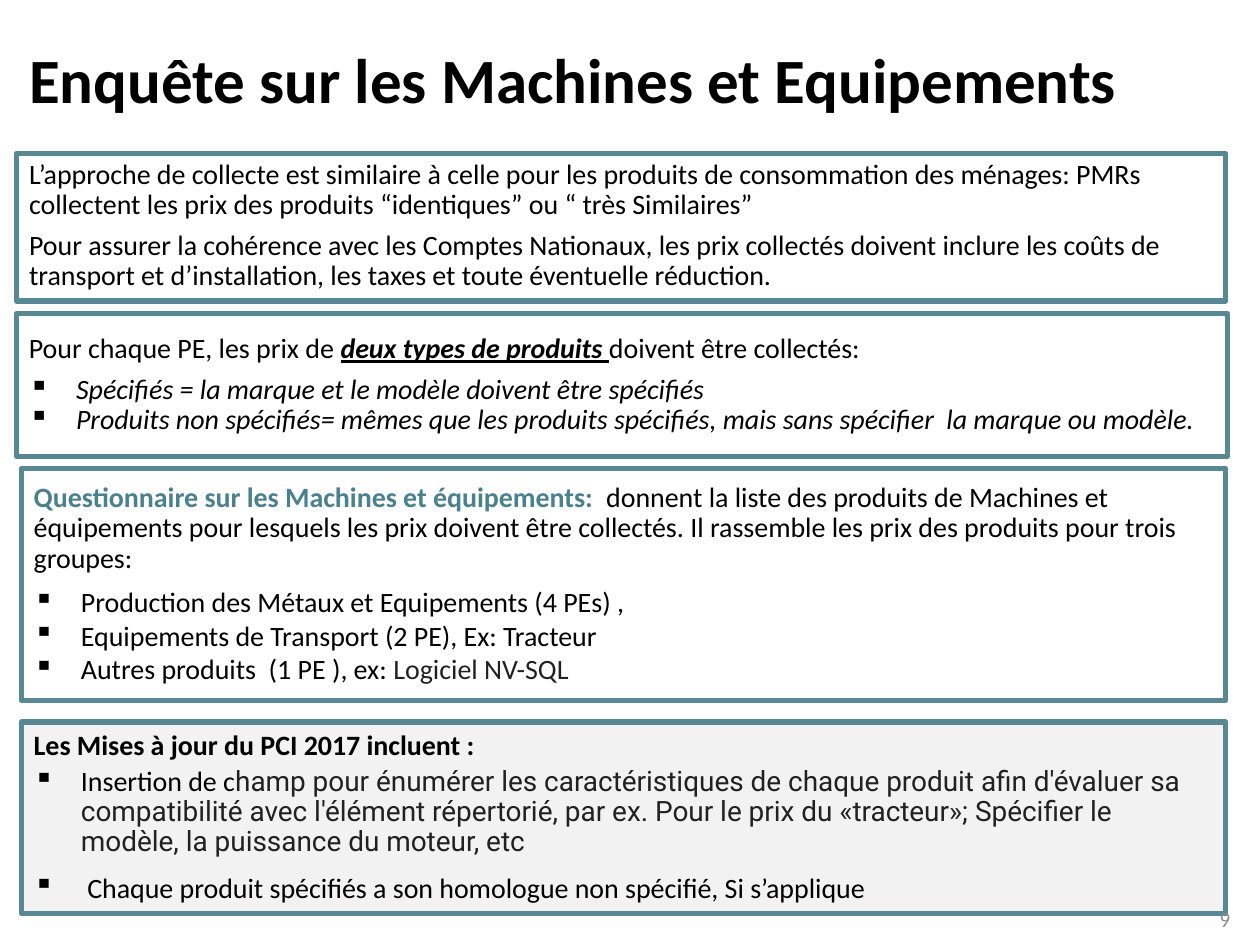
from lxml.etree import SubElement
from pptx import Presentation
from pptx.dml.color import RGBColor
from pptx.enum.shapes import MSO_SHAPE as Shape
from pptx.enum.text import MSO_ANCHOR as Anchor, MSO_AUTO_SIZE as AutoSize, PP_ALIGN as Align
from pptx.oxml.ns import qn
from pptx.util import Pt

BLACK = RGBColor(0x00, 0x00, 0x00)
WHITE = RGBColor(0xFF, 0xFF, 0xFF)
PALE = RGBColor(0xF2, 0xF2, 0xF2)
TEAL = RGBColor(0x58, 0x88, 0x94)
HEADING = RGBColor(0x4B, 0x80, 0x8F)
CHARCOAL = RGBColor(0x21, 0x21, 0x21)
GREY = RGBColor(0x8C, 0x8C, 0x8C)

BOLD = {"bold": True}
ITALIC = {"italic": True}
STRESS = {"bold": True, "italic": True, "underline": True}
INDENT = Pt(27)


def add_span(para, text, size=16, color=BLACK, name="Calibri", **styles):
    span = para.add_run()
    span.text = text
    span.font.size, span.font.name = Pt(size), name
    span.font.color.rgb = color
    for style, value in styles.items():
        setattr(span.font, style, value)


def set_bullet(para, bulleted):
    """Give the paragraph a hanging square bullet, or none at all."""
    props = para._p.get_or_add_pPr()
    props.set("marL", str(INDENT if bulleted else 0))
    props.set("indent", str(-INDENT if bulleted else 0))
    if bulleted:
        SubElement(props, qn("a:buChar")).set("char", "▪")
    else:
        SubElement(props, qn("a:buNone"))


# Each paragraph: bulleted, line spacing, points before, points after, runs
approach = [
    (False, 0.9, 0, 6, [("L’approche de collecte est similaire à celle pour les produits de consommation des ménages: PMRs collectent les prix des produits “identiques” ou “ très Similaires”", {})]),
    (False, 0.9, 0, 6, [("Pour assurer la cohérence avec les Comptes Nationaux, les prix collectés doivent inclure les coûts de transport et d’installation, les taxes et toute éventuelle réduction.", {})]),
]
product_types = [
    (False, 0.9, 0, 6, [
        ("Pour chaque PE, les prix de ", {}),
        ("deux types de produits ", STRESS),
        ("doivent être collectés:", {})]),
    (True, 0.9, 0, 0, [("Spécifiés = la marque et le modèle doivent être spécifiés", ITALIC)]),
    (True, 0.9, 0, 0, [("Produits non spécifiés= mêmes que les produits spécifiés, mais sans spécifier  la marque ou modèle.", ITALIC)]),
]
questionnaire = [
    (False, 0.9, 0, 6, [
        ("Questionnaire sur les Machines et équipements: ", {"color": HEADING, "bold": True}),
        (" donnent la liste des produits de Machines et équipements pour lesquels les prix doivent être collectés. Il rassemble les prix des produits pour trois groupes:", {})]),
    (True, 1, 0, 0, [("Production des Métaux et Equipements (4 PEs) ,", {})]),
    (True, 1, 0, 0, [("Equipements de Transport (2 PE), Ex: Tracteur", {})]),
    (True, 1, 0, 6, [
        ("Autres produits  (1 PE ), ex: ", {}),
        ("Logiciel NV-SQL", {"color": CHARCOAL})]),
]
updates = [
    (False, 0.9, 0, 0, [("Les Mises à jour du PCI 2017 incluent :", BOLD)]),
    (True, 0.9, 3.2, 6, [
        ("Insertion de c", {}),
        ("hamp pour énumérer les caractéristiques de chaque produit afin d'évaluer sa compatibilité avec l'élément répertorié, par ex. Pour le prix du «tracteur»; Spécifier le modèle, la puissance du moteur, etc", {"color": CHARCOAL, "name": "Roboto"})]),
    (True, 0.9, 3.2, 6, [(" Chaque produit spécifiés a son homologue non spécifié, Si s’applique", {})]),
]

deck = Presentation()
deck.slide_width, deck.slide_height = Pt(720), Pt(540)
page = deck.slides.add_slide(deck.slide_layouts[1])

title = page.shapes.title
title.left, title.top, title.width, title.height = Pt(9.4), Pt(17.3), Pt(691), Pt(55.4)
title.text_frame.auto_size = AutoSize.NONE
title.text_frame.vertical_anchor = Anchor.MIDDLE
para = title.text_frame.paragraphs[0]
para.alignment = Align.LEFT
add_span(para, "Enquête sur les Machines et Equipements", size=36, bold=True)

body = page.placeholders[1]
body.left, body.top, body.width, body.height = Pt(9.4), Pt(87.8), Pt(691), Pt(84.2)
panels = [(body, WHITE, Anchor.TOP, approach)]
for left, top, width, height, fill, paras in [
    (9.4, 179.3, 692, 81.4, WHITE, product_types),
    (12.2, 267.8, 688.3, 132.5, WHITE, questionnaire),
    (12.2, 412.6, 688.3, 109.4, PALE, updates),
]:
    box = page.shapes.add_shape(Shape.RECTANGLE, Pt(left), Pt(top), Pt(width), Pt(height))
    box.shadow.inherit = False
    panels.append((box, fill, Anchor.MIDDLE, paras))

for box, fill, anchor, paras in panels:
    box.fill.solid()
    box.fill.fore_color.rgb = fill
    box.line.color.rgb = TEAL
    box.line.width = Pt(3)
    frame = box.text_frame
    frame.word_wrap = True
    frame.auto_size = AutoSize.NONE
    frame.vertical_anchor = anchor
    for number, (bulleted, spacing, before, after, spans) in enumerate(paras):
        para = frame.add_paragraph() if number else frame.paragraphs[0]
        set_bullet(para, bulleted)
        para.alignment = Align.LEFT
        para.line_spacing = spacing
        para.space_before, para.space_after = Pt(before), Pt(after)
        for text, styles in spans:
            add_span(para, text, **styles)

page_number = page.shapes.add_textbox(Pt(542), Pt(516.2), Pt(168), Pt(18))
page_number.text_frame.word_wrap = True
page_number.text_frame.vertical_anchor = Anchor.MIDDLE
para = page_number.text_frame.paragraphs[0]
para.alignment = Align.RIGHT
add_span(para, "9", size=12, color=GREY)

deck.save("out.pptx")
